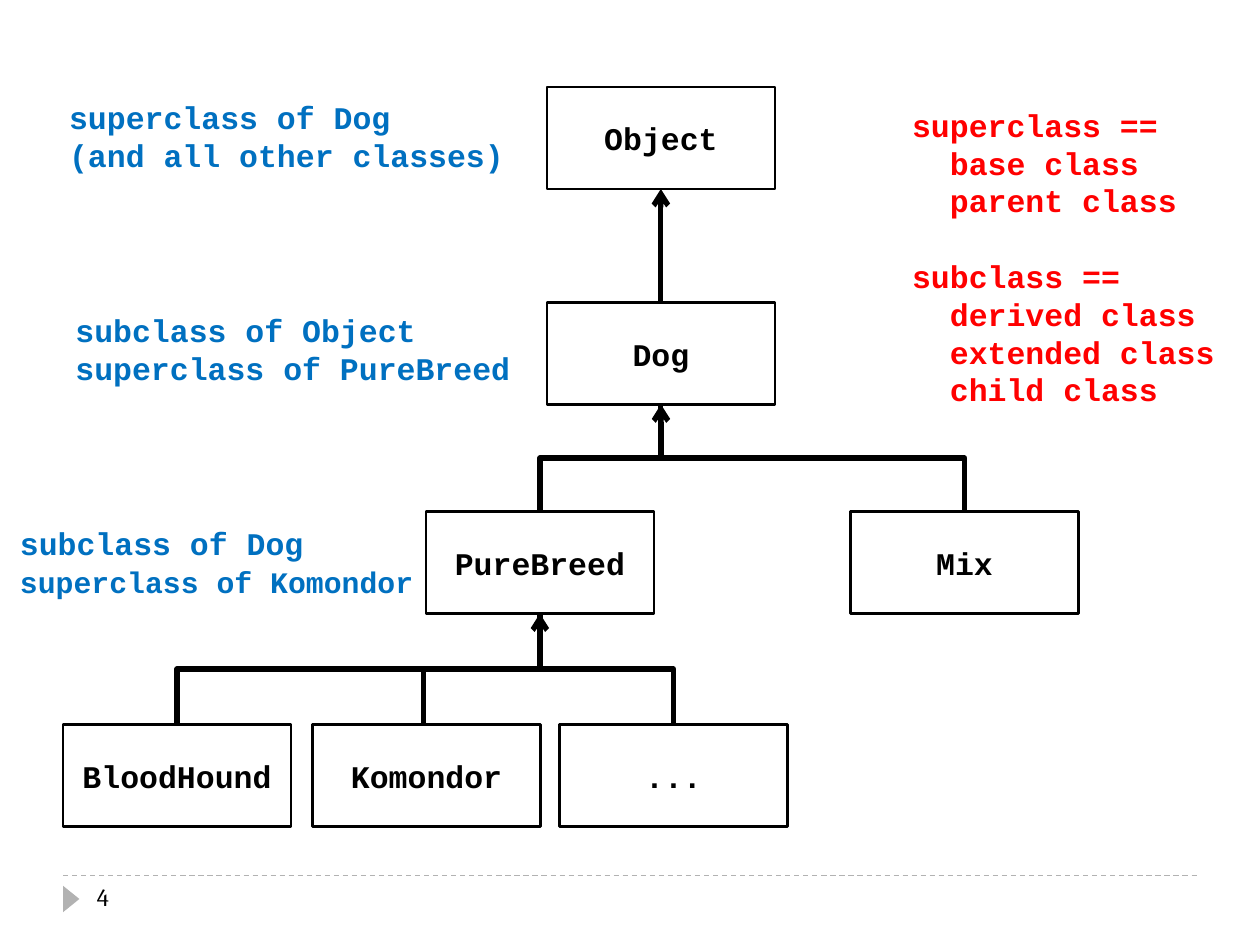
from pptx import Presentation
from pptx.dml.color import RGBColor
from pptx.enum.dml import MSO_LINE_DASH_STYLE as DASH
from pptx.enum.shapes import MSO_CONNECTOR as LINK, MSO_SHAPE as SHAPE
from pptx.enum.text import MSO_ANCHOR as ANCHOR, PP_ALIGN as ALIGN
from pptx.oxml.ns import qn
from pptx.util import Inches, Pt
from lxml.etree import SubElement

BLACK = RGBColor(0x00, 0x00, 0x00)
GRAY = RGBColor(0xB2, 0xB2, 0xB2)
BLUE = RGBColor(0x00, 0x70, 0xC0)
RED = RGBColor(0xFF, 0x00, 0x00)

CODE_FONT = "Courier New"
LINE_PITCH = Pt(21.6)
BOX_W, BOX_H = 1.81, 0.81
ROWS = (0.69, 2.4, 4.06, 5.75)
TOP, BOTTOM = 0, 2

# class name: (left, row)
CLASSES = {
    "Object": (4.34, 0),
    "Dog": (4.34, 1),
    "PureBreed": (3.38, 2),
    "Mix": (6.75, 2),
    "BloodHound": (0.5, 3),
    "Komondor": (2.48, 3),
    "...": (4.44, 3),
}

# left, top, width, height, lines of (text, size)
ROLE_NOTES = (
    (0.45, 0.73, 3.67, 0.71,
     (("superclass of Dog", 18), ("(and all other classes)", 18))),
    (0.5, 2.42, 3.67, 0.71,
     (("subclass of Object", 18), ("superclass of PureBreed", 18))),
    (0.06, 4.11, 3.36, 0.69,
     (("subclass of Dog", 18), ("superclass of Komondor", 17))),
)

SYNONYMS = (
    ("superclass ==", ("base class", "parent class")),
    ("subclass ==", ("derived class", "extended class", "child class")),
)


def add_run(paragraph, text, color, size=18, font=CODE_FONT, bold=True):
    run = paragraph.add_run()
    run.text = text
    run.font.name = font
    run.font.size = Pt(size)
    run.font.bold = bold
    run.font.color.rgb = color


def add_text_area(slide, left, top, width, height):
    area = slide.shapes.add_textbox(
        Inches(left), Inches(top), Inches(width), Inches(height))
    area.text_frame.word_wrap = False
    return area.text_frame


def next_paragraph(frame):
    """Return the first paragraph while it is unused, else a new one."""
    first = frame.paragraphs[0]
    paragraph = frame.add_paragraph() if first.runs else first
    paragraph.line_spacing = LINE_PITCH
    return paragraph


def add_class_box(slide, name, left, row):
    box = slide.shapes.add_shape(
        SHAPE.RECTANGLE, Inches(left), Inches(ROWS[row]),
        Inches(BOX_W), Inches(BOX_H))
    box.shadow.inherit = False
    box.fill.background()
    box.line.color.rgb = BLACK
    box.line.width = Pt(1.5)
    frame = box.text_frame
    frame.vertical_anchor = ANCHOR.MIDDLE
    frame.paragraphs[0].alignment = ALIGN.CENTER
    add_run(frame.paragraphs[0], name, BLACK)
    return box


def add_line(slide, start=(0, 0), end=(0, 0), kind=LINK.STRAIGHT,
             color=BLACK, width=3):
    line = slide.shapes.add_connector(
        kind, *(Inches(value) for value in (*start, *end)))
    line.line.color.rgb = color
    line.line.width = Pt(width)
    SubElement(line.element.spPr, qn("a:effectLst"))
    return line


def turn_upright(elbow):
    """Make an elbow leave its upper end downwards instead of sideways."""
    rightward = elbow.end_x > elbow.begin_x
    left, top, width, height = elbow.left, elbow.top, elbow.width, elbow.height
    elbow.left = left + (width - height) // 2
    elbow.top = top + (height - width) // 2
    elbow.width, elbow.height = height, width
    xfrm = elbow.element.spPr.find(qn("a:xfrm"))
    xfrm.attrib.pop("flipH", None)
    xfrm.attrib.pop("flipV", None)
    xfrm.set("rot", "16200000" if rightward else "5400000")
    if rightward:
        xfrm.set("flipH", "1")


def join_classes(slide, parent, child, arrow=False, kind=LINK.ELBOW):
    link = add_line(slide, kind=kind)
    link.begin_connect(parent, BOTTOM)
    link.end_connect(child, TOP)
    if kind == LINK.ELBOW:
        turn_upright(link)
    if arrow:
        SubElement(link.line._get_or_add_ln(), qn("a:headEnd"), type="arrow")


def add_role_note(slide, left, top, width, height, lines):
    frame = add_text_area(slide, left, top, width, height)
    for text, size in lines:
        add_run(next_paragraph(frame), text, BLUE, size)


def add_synonyms(slide):
    frame = add_text_area(slide, 7.14, 0.79, 2.61, 2.52)
    for group, (heading, terms) in enumerate(SYNONYMS):
        paragraph = next_paragraph(frame)
        if group:
            paragraph.space_before = LINE_PITCH
        add_run(paragraph, heading, RED)
        for term in terms:
            paragraph = next_paragraph(frame)
            paragraph._p.get_or_add_pPr().set("marL", str(Inches(0.3)))
            add_run(paragraph, term, RED)


def add_footer(slide):
    rule = add_line(slide, (0.5, 6.95), (9.5, 6.95), color=GRAY, width=0.75)
    rule.line.dash_style = DASH.DASH
    marker = slide.shapes.add_shape(
        SHAPE.ISOSCELES_TRIANGLE, Inches(0.46), Inches(7.07),
        Inches(0.21), Inches(0.13))
    marker.rotation = 90
    marker.shadow.inherit = False
    marker.fill.solid()
    marker.fill.fore_color.rgb = GRAY
    marker.line.fill.background()
    number = add_text_area(slide, 0.67, 6.95, 2.17, 0.4)
    add_run(number.paragraphs[0], "4", BLACK, 14, "Cambria", False)


def main():
    deck = Presentation()
    deck.slide_width, deck.slide_height = Inches(10), Inches(7.5)
    slide = deck.slides.add_slide(deck.slide_layouts[6])

    add_footer(slide)
    boxes = {name: add_class_box(slide, name, left, row)
             for name, (left, row) in CLASSES.items()}

    join_classes(slide, boxes["Object"], boxes["Dog"], True, LINK.STRAIGHT)
    join_classes(slide, boxes["Dog"], boxes["Mix"], True)
    join_classes(slide, boxes["Dog"], boxes["PureBreed"])
    join_classes(slide, boxes["PureBreed"], boxes["BloodHound"])
    join_classes(slide, boxes["PureBreed"], boxes["..."], True)
    branch_y = (ROWS[2] + BOX_H + ROWS[3]) / 2
    add_line(slide, (3.36, branch_y), (3.36, ROWS[3]))

    for note in ROLE_NOTES:
        add_role_note(slide, *note)
    add_synonyms(slide)
    deck.save("out.pptx")


if __name__ == "__main__":
    main()
